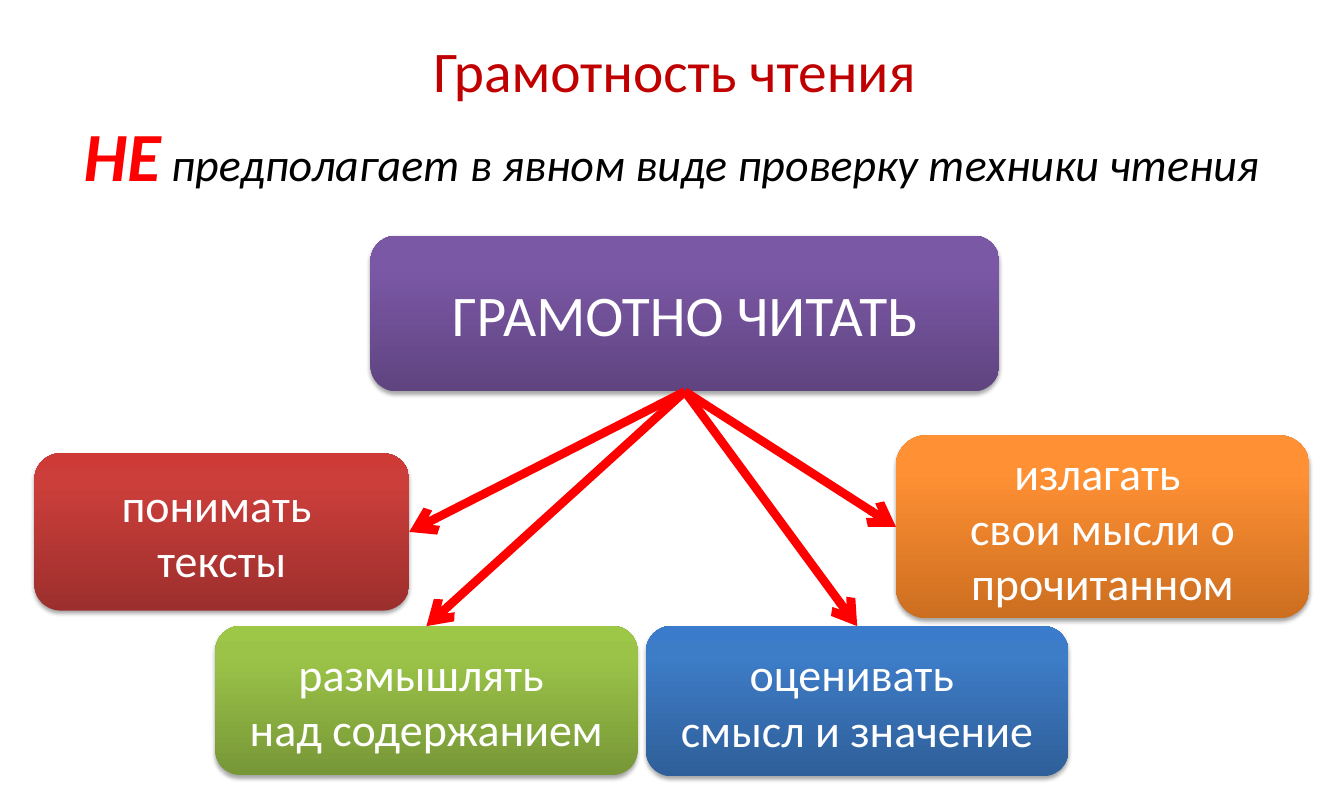
from dataclasses import dataclass

from lxml.etree import SubElement
from pptx import Presentation
from pptx.dml.color import RGBColor
from pptx.enum.shapes import MSO_CONNECTOR as Connector, MSO_SHAPE as Shape
from pptx.enum.text import MSO_ANCHOR as Anchor, PP_ALIGN as Align
from pptx.oxml import parse_xml
from pptx.oxml.ns import nsdecls, qn
from pptx.util import Pt

WHITE = RGBColor(0xFF, 0xFF, 0xFF)
BLACK = RGBColor(0x00, 0x00, 0x00)
RED = RGBColor(0xFF, 0x00, 0x00)
DARK_RED = RGBColor(0xC0, 0x00, 0x00)
PURPLES = (RGBColor(0x5F, 0x44, 0x80), RGBColor(0x7B, 0x58, 0xA6), RGBColor(0x7C, 0x57, 0xA8))
REDS = (RGBColor(0x9C, 0x2F, 0x2D), RGBColor(0xCB, 0x3E, 0x3A), RGBColor(0xCE, 0x3B, 0x37))
GREENS = (RGBColor(0x77, 0x97, 0x37), RGBColor(0x9B, 0xC3, 0x48), RGBColor(0x9D, 0xC7, 0x46))
BLUES = (RGBColor(0x2F, 0x5F, 0x99), RGBColor(0x3D, 0x7C, 0xC7), RGBColor(0x3A, 0x7C, 0xCB))
ORANGES = (RGBColor(0xCC, 0x6E, 0x20), RGBColor(0xFF, 0x90, 0x34), RGBColor(0xFF, 0x91, 0x36))

STOPS = (0, 80, 100)  # gradient positions in percent, bottom to top
TOP, LEFT, BOTTOM, RIGHT = range(4)  # connection sites of a rounded rectangle
FRAME_FORMAT = {"word_wrap": True, "margin_left": 0, "margin_right": 0,
                "margin_top": 0, "margin_bottom": 0, "vertical_anchor": Anchor.TOP}


@dataclass(frozen=True)
class Card:
    lines: tuple[str, ...]
    left: float
    top: float
    width: float
    height: float
    colours: tuple[RGBColor, ...]
    size: float = 32
    site: int = TOP  # where the arrow arrives


MAIN = Card(("ГРАМОТНО ЧИТАТЬ",), 258, 164, 438, 108.5, PURPLES, 40)
SKILLS = (
    Card(("излагать ", "свои мысли о прочитанном"), 624, 303, 288, 127.5, ORANGES, site=LEFT),
    Card(("размышлять ", "над содержанием"), 150, 435.8, 294, 103.7, GREENS),
    Card(("понимать ", "тексты"), 24, 315.5, 261, 109.5, REDS, site=RIGHT),
    Card(("оценивать ", "смысл и значение"), 450, 435.8, 294, 104.5, BLUES),
)


def apply_format(target, values: dict) -> None:
    for name, value in values.items():
        setattr(target, name, value)


def add_run(paragraph, text: str, size: float, colour: RGBColor, **extra) -> None:
    run = paragraph.add_run()
    run.text = text
    apply_format(run.font, {"name": "Calibri", "size": Pt(size), **extra})
    run.font.color.rgb = colour


def set_gradient(shape, colours: tuple[RGBColor, ...]) -> None:
    stops = "".join(f'<a:gs pos="{position * 1000}"><a:srgbClr val="{colour}"/></a:gs>'
                    for position, colour in zip(STOPS, colours))
    gradient = parse_xml(f'<a:gradFill {nsdecls("a")} rotWithShape="1"><a:gsLst>{stops}</a:gsLst>'
                         '<a:lin ang="16200000" scaled="0"/></a:gradFill>')
    shape._element.spPr.find(qn("a:prstGeom")).addnext(gradient)


def set_shadow(shape) -> None:
    shape.shadow.inherit = False
    shape._element.spPr.find(qn("a:effectLst")).append(parse_xml(
        f'<a:outerShdw {nsdecls("a")} blurRad="{Pt(3.1)}" dist="{Pt(1.8)}" dir="5400000" '
        'rotWithShape="0"><a:srgbClr val="000000"><a:alpha val="35000"/></a:srgbClr>'
        '</a:outerShdw>'))


def add_card(slide, card: Card):
    shape = slide.shapes.add_shape(Shape.ROUNDED_RECTANGLE, Pt(card.left), Pt(card.top),
                                   Pt(card.width), Pt(card.height))
    set_gradient(shape, card.colours)
    shape.line.fill.background()
    set_shadow(shape)
    frame = shape.text_frame
    apply_format(frame, {"word_wrap": True, "vertical_anchor": Anchor.MIDDLE})
    for index, line in enumerate(card.lines):
        paragraph = frame.add_paragraph() if index else frame.paragraphs[0]
        paragraph.alignment = Align.CENTER
        add_run(paragraph, line, card.size, WHITE)
    return shape


def add_arrow(slide, source, target, site: int) -> None:
    arrow = slide.shapes.add_connector(Connector.STRAIGHT, 0, 0, 0, 0)
    arrow.begin_connect(source, BOTTOM)
    arrow.end_connect(target, site)
    arrow.line.color.rgb = RED
    arrow.line.width = Pt(6)
    SubElement(arrow.line._get_or_add_ln(), qn("a:tailEnd"), type="arrow")
    SubElement(arrow._element.spPr, qn("a:effectLst"))


def main() -> None:
    presentation = Presentation()
    apply_format(presentation, {"slide_width": Pt(936), "slide_height": Pt(564.5)})
    slide = presentation.slides.add_slide(presentation.slide_layouts[5])

    # Title and the statement below it
    title = slide.shapes.title
    apply_format(title, {"left": Pt(72), "top": Pt(24.5), "width": Pt(795.6), "height": Pt(48.2)})
    statement = slide.shapes.add_textbox(Pt(48), Pt(78.5), Pt(840), Pt(97))
    for box in (title, statement):
        apply_format(box.text_frame, FRAME_FORMAT)
        box.text_frame.paragraphs[0].alignment = Align.CENTER
    add_run(title.text_frame.paragraphs[0], "Грамотность чтения", 40, DARK_RED)
    paragraph = statement.text_frame.paragraphs[0]
    add_run(paragraph, "НЕ", 48, RED, bold=True, italic=True)
    add_run(paragraph, " предполагает в явном виде проверку техники чтения", 32, BLACK, italic=True)

    # Main idea with an arrow to each skill
    main_shape = add_card(slide, MAIN)
    for skill in SKILLS:
        add_arrow(slide, main_shape, add_card(slide, skill), skill.site)

    presentation.save("out.pptx")


if __name__ == "__main__":
    main()
